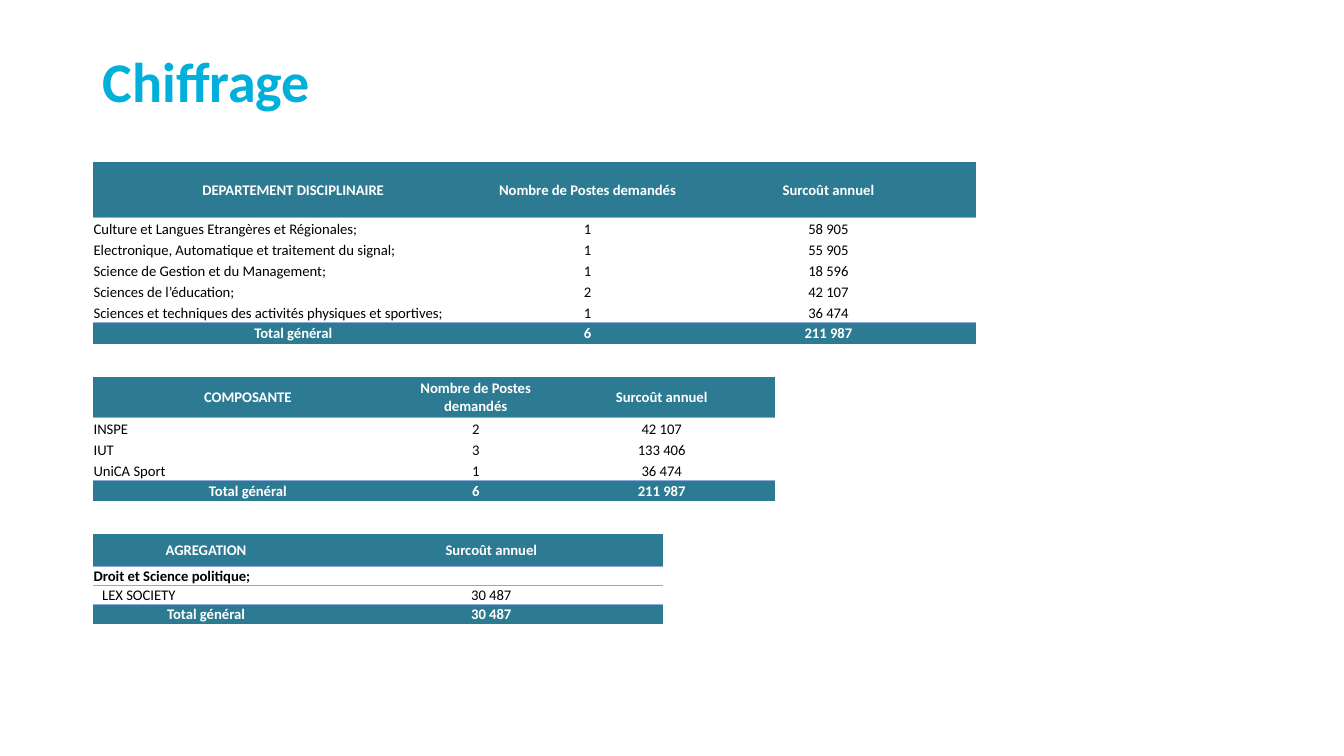
import lxml.etree
import pptx
import pptx.dml.color
import pptx.enum.text
import pptx.oxml.ns
import pptx.util

Pt = pptx.util.Pt
qn = pptx.oxml.ns.qn
ALIGN = pptx.enum.text.PP_ALIGN
ANCHOR = pptx.enum.text.MSO_ANCHOR

COLORS = {
    "title": "00AFDA",
    "band": "2D7B93",
    "rule": "8EA9DB",
    "divider": "A5A5A5",
    "light": "FFFFFF",
    "dark": "000000",
}
FONT = "Calibri"
NO_STYLE = "{2D5ABB26-0587-4C30-8999-92F81FD0307C}"
LEFT = 66.2


def set_font(paragraph, size, color, bold):
    paragraph.font.name = FONT
    paragraph.font.size = Pt(size)
    paragraph.font.bold = bold
    paragraph.font.color.rgb = pptx.dml.color.RGBColor.from_string(COLORS[color])


def set_border(cell, edge, color):
    """Draw a thin line on one edge (lnT or lnB) of a cell."""
    properties = cell._tc.get_or_add_tcPr()
    line = lxml.etree.Element(qn("a:" + edge), w=str(Pt(0.5)))
    fill = lxml.etree.SubElement(line, qn("a:solidFill"))
    lxml.etree.SubElement(fill, qn("a:srgbClr"), val=COLORS[color])
    properties.insert(0, line)


def fill_cell(cell, text, band=False, bold=False, centered=True, indent=0.7):
    cell.margin_left = Pt(indent)
    cell.margin_right = cell.margin_top = Pt(0.7)
    cell.margin_bottom = 0
    cell.vertical_anchor = ANCHOR.MIDDLE if band else ANCHOR.BOTTOM
    if band:
        cell.fill.solid()
        cell.fill.fore_color.rgb = pptx.dml.color.RGBColor.from_string(COLORS["band"])
    else:
        cell.fill.background()
    cell.text = text
    paragraph = cell.text_frame.paragraphs[0]
    paragraph.alignment = ALIGN.CENTER if centered else ALIGN.LEFT
    set_font(paragraph, 10.5, "light" if band else "dark", band or bold)


def add_title(slide, left, top, width, height):
    title = slide.shapes.title
    title.left, title.top, title.width, title.height = map(Pt, (left, top, width, height))
    title.text_frame.text = "Chiffrage"
    title.text_frame.vertical_anchor = ANCHOR.MIDDLE
    paragraph = title.text_frame.paragraphs[0]
    paragraph.alignment = ALIGN.LEFT
    paragraph.line_spacing = 0.9
    set_font(paragraph, 40, "title", True)


def add_cost_table(slide, left, top, widths, heights, rows):
    """Place a table whose first and last rows are coloured bands.

    A row with a single value is a group heading; the rows below it are indented.
    """
    frame = slide.shapes.add_table(
        len(rows), len(widths), Pt(left), Pt(top), Pt(sum(widths)), Pt(sum(heights)))
    table = frame.table
    table.first_row = table.horz_banding = False
    next(frame._element.iter(qn("a:tableStyleId"))).text = NO_STYLE
    for column, width in zip(table.columns, widths):
        column.width = Pt(width)
    for row, height in zip(table.rows, heights):
        row.height = Pt(height)

    last = len(rows) - 1
    indent = 0.7
    for row_index, values in enumerate(rows):
        band = row_index in (0, last)
        heading = len(values) == 1
        if heading:
            table.cell(row_index, 0).merge(table.cell(row_index, len(widths) - 1))
        for column_index, value in enumerate(values):
            first = column_index == 0
            fill_cell(table.cell(row_index, column_index), value, band, heading,
                      centered=band or not first,
                      indent=indent if first and not band else 0.7)
        for column_index in range(len(widths)):
            cell = table.cell(row_index, column_index)
            if row_index == 0:
                set_border(cell, "lnB", "rule")
            elif row_index == last:
                set_border(cell, "lnT", "rule")
            elif heading:
                set_border(cell, "lnB", "divider")
        if heading:
            indent = 6.8


def build_slide(presentation):
    slide = presentation.slides.add_slide(presentation.slide_layouts[5])
    add_title(slide, LEFT, 28.8, 828, 63.4)

    # Cost by department
    add_cost_table(slide, LEFT, 115.9, (286.6, 133.9, 210.2), [39.6] + [15] * 6, [
        ("DEPARTEMENT DISCIPLINAIRE", "Nombre de Postes demandés", "Surcoût annuel"),
        ("Culture et Langues Etrangères et Régionales;", "1", "58 905"),
        ("Electronique, Automatique et traitement du signal;", "1", "55 905"),
        ("Science de Gestion et du Management;", "1", "18 596"),
        ("Sciences de l’éducation;", "2", "42 107"),
        ("Sciences et techniques des activités physiques et sportives;", "1", "36 474"),
        ("Total général", "6", "211 987"),
    ])

    # Cost by component
    add_cost_table(slide, LEFT, 269.3, (221.8, 103.7, 162), [28.8] + [15] * 4, [
        ("COMPOSANTE", "Nombre de Postes demandés", "Surcoût annuel"),
        ("INSPE", "2", "42 107"),
        ("IUT", "3", "133 406"),
        ("UniCA Sport", "1", "36 474"),
        ("Total général", "6", "211 987"),
    ])

    # Cost of the agrégation
    add_cost_table(slide, LEFT, 381.6, (162, 245.5), (23, 13.4, 13, 14), [
        ("AGREGATION", "Surcoût annuel"),
        ("Droit et Science politique;",),
        ("LEX SOCIETY", "30 487"),
        ("Total général", "30 487"),
    ])


def main():
    presentation = pptx.Presentation()
    presentation.slide_width = Pt(960)
    presentation.slide_height = Pt(540)
    build_slide(presentation)
    presentation.save("out.pptx")


if __name__ == "__main__":
    main()
